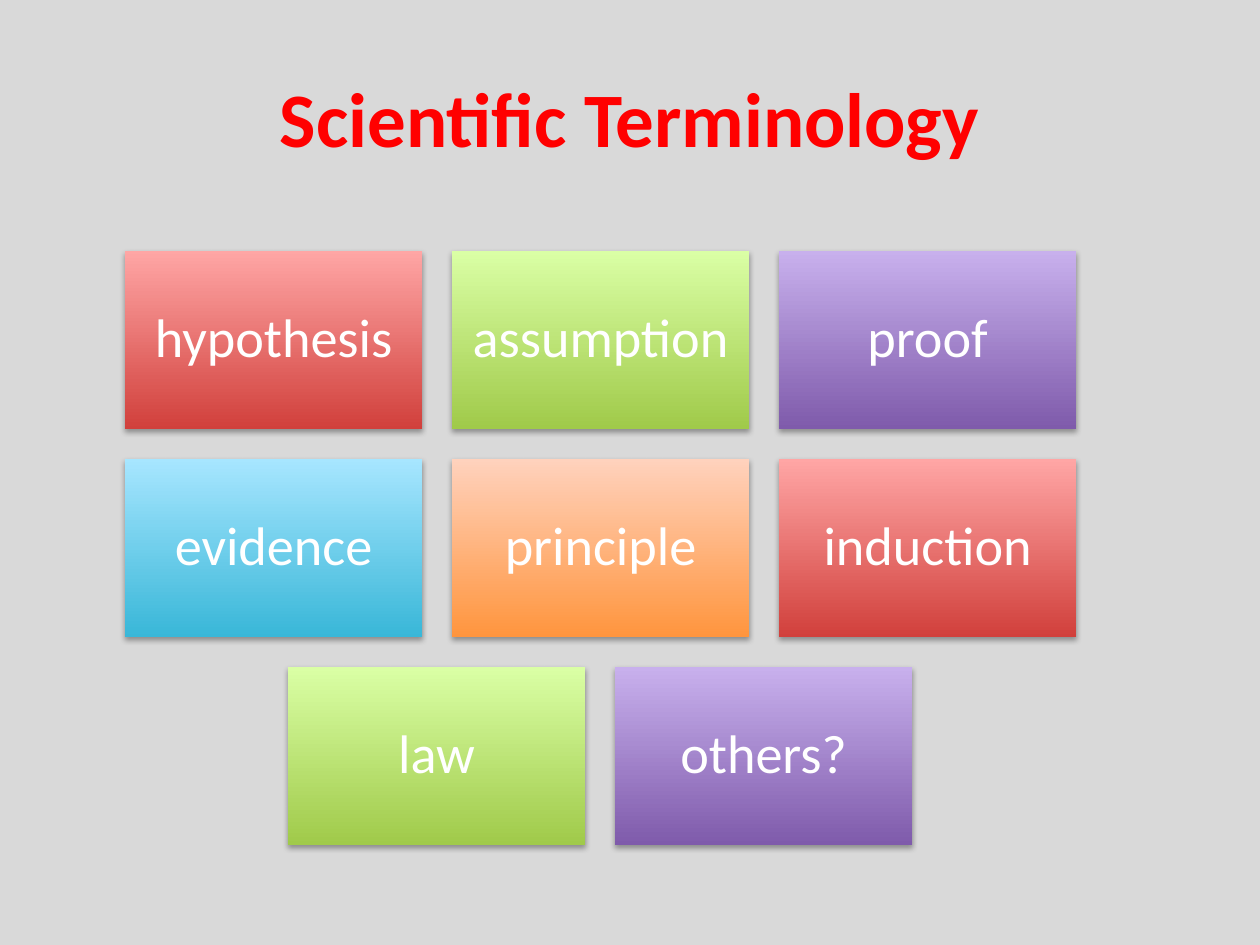
from dataclasses import dataclass

from lxml.etree import SubElement
from pptx import Presentation
from pptx.dml.color import RGBColor
from pptx.enum.shapes import MSO_SHAPE
from pptx.enum.text import MSO_ANCHOR, PP_ALIGN
from pptx.oxml.ns import qn
from pptx.util import Emu, Pt

PX_PER_INCH = 126
PAGE_WIDTH, PAGE_HEIGHT = 1260, 945
FONT = "Calibri"

# Grid of terms
GRID_LEFT, GRID_TOP = 125, 251
TILE_WIDTH, TILE_HEIGHT, GAP = 297, 178, 30
COLUMNS = 3
INSET = 16


@dataclass(frozen=True)
class Gradient:
    bottom: str
    top: str


PALETTE = [
    Gradient("D1403C", "FFA6A5"),
    Gradient("A0CA4A", "DAFFA5"),
    Gradient("7F5BAB", "C8B0ED"),
    Gradient("39B7D8", "A7E6FF"),
    Gradient("FF953E", "FFD2BD"),
]
TERMS = ["hypothesis", "assumption", "proof", "evidence",
         "principle", "induction", "law", "others?"]


def px(length: int) -> Emu:
    return Emu(round(length * 914400 / PX_PER_INCH))


def color(value: str) -> RGBColor:
    return RGBColor.from_string(value)


def write(frame, text: str, size: int, ink: str, bold: bool = False):
    """Put one centred line of text in a frame and return its paragraph."""
    frame.word_wrap = True
    frame.vertical_anchor = MSO_ANCHOR.MIDDLE
    para = frame.paragraphs[0]
    para.alignment = PP_ALIGN.CENTER
    span = para.add_run()
    span.text = text
    span.font.name = FONT
    span.font.size = Pt(size)
    span.font.bold = bold
    span.font.color.rgb = color(ink)
    return para


def add_shadow(box) -> None:
    """Give a shape a soft shadow straight below it."""
    box.shadow.inherit = False
    effects = box._element.spPr.find(qn("a:effectLst"))
    shadow = SubElement(effects, qn("a:outerShdw"), blurRad=str(Pt(3.1)),
                        dist=str(Pt(1.8)), dir="5400000", rotWithShape="0")
    tint = SubElement(shadow, qn("a:srgbClr"), val="000000")
    SubElement(tint, qn("a:alpha"), val="35000")


def add_tile(page, left: int, top: int, term: str, gradient: Gradient) -> None:
    box = page.shapes.add_shape(MSO_SHAPE.RECTANGLE, px(left), px(top),
                                px(TILE_WIDTH), px(TILE_HEIGHT))
    box.line.fill.background()
    box.fill.gradient()
    box.fill.gradient_angle = 90
    for stop, value in zip(box.fill.gradient_stops, (gradient.bottom, gradient.top)):
        stop.color.rgb = color(value)
    add_shadow(box)

    frame = box.text_frame
    frame.margin_left = frame.margin_right = px(INSET)
    frame.margin_top = frame.margin_bottom = px(INSET)
    write(frame, term, 31, "FFFFFF").line_spacing = 0.9


def add_grid(page) -> None:
    """Lay the tiles out in rows, centring a row that is not full."""
    step_x, step_y = TILE_WIDTH + GAP, TILE_HEIGHT + GAP
    for index, term in enumerate(TERMS):
        row, column = divmod(index, COLUMNS)
        in_row = min(COLUMNS, len(TERMS) - row * COLUMNS)
        indent = (COLUMNS - in_row) * step_x // 2
        add_tile(page, GRID_LEFT + indent + column * step_x,
                 GRID_TOP + row * step_y, term, PALETTE[index % len(PALETTE)])


def main() -> None:
    deck = Presentation()
    deck.slide_width, deck.slide_height = px(PAGE_WIDTH), px(PAGE_HEIGHT)
    page = deck.slides.add_slide(deck.slide_layouts[5])
    page.background.fill.solid()
    page.background.fill.fore_color.rgb = color("D9D9D9")

    # Title
    title = page.shapes.title
    title.left, title.top = px(63), px(38)
    title.width, title.height = px(1134), px(157)
    write(title.text_frame, "Scientific Terminology", 44, "FF0000", bold=True)

    # Terms
    add_grid(page)
    deck.save("out.pptx")


if __name__ == "__main__":
    main()
